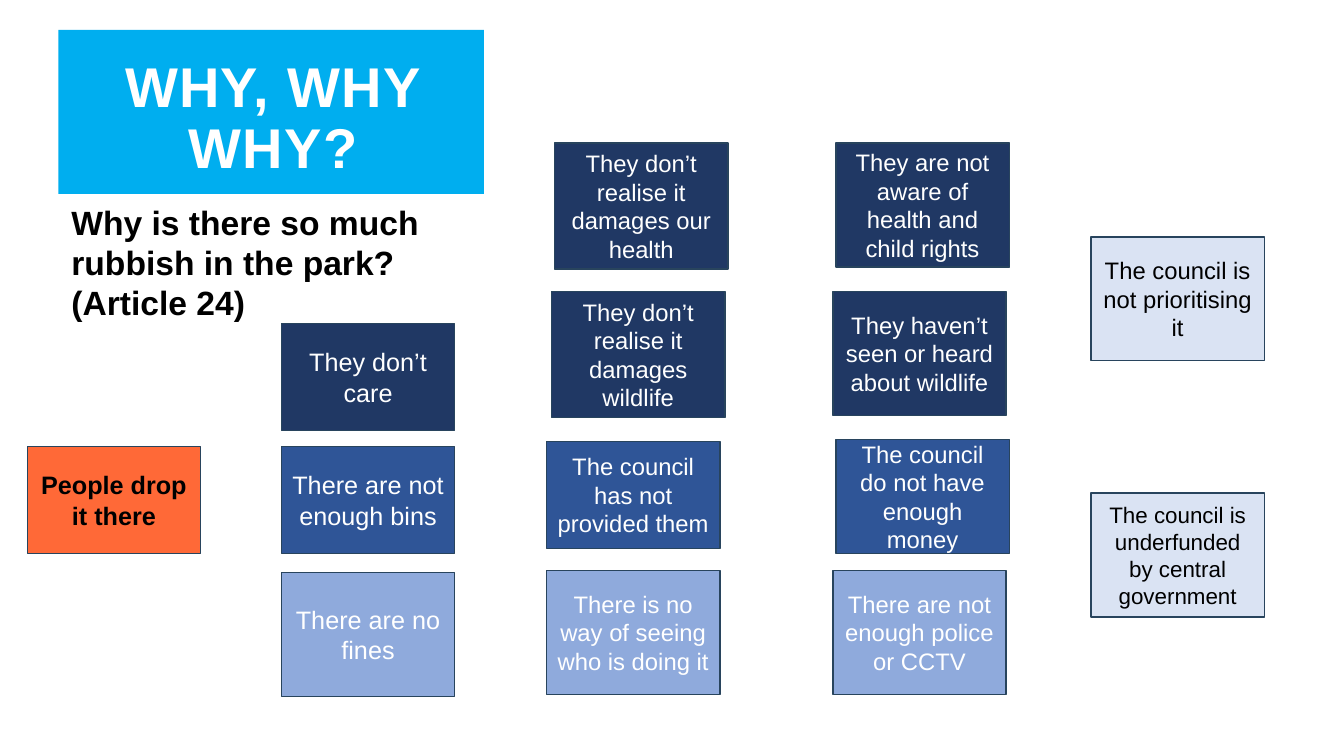
"""Build the "Why, why, why?" slide about rubbish in the park."""
from dataclasses import dataclass
from typing import Any

from pptx import Presentation
from pptx.dml.color import RGBColor
from pptx.enum.shapes import MSO_SHAPE as Preset
from pptx.enum.text import MSO_ANCHOR as Anchor, MSO_AUTO_SIZE as AutoSize, PP_ALIGN as Align
from pptx.util import Inches, Pt

COLOURS = {
    "heading": "00AEEF",
    "problem": "FF6937",
    "attitudes": "203864",
    "bins": "2F5597",
    "policing": "8FAADC",
    "council": "DAE3F3",
    "outline": "28445D",
    "light": "FFFFFF",
    "dark": "000000",
}
CARD_WIDTH = 1.72
HEADING_FRAME = {
    "margin_left": Inches(0.16),
    "margin_top": Inches(0.16),
    "margin_right": Inches(0.12),
    "margin_bottom": 0,
    "vertical_anchor": Anchor.MIDDLE,
    "auto_size": AutoSize.SHAPE_TO_FIT_TEXT,
    "word_wrap": True,
}
HEADING_PARAGRAPH = {"alignment": Align.CENTER, "line_spacing": 0.9, "space_before": 0}
QUESTION_FRAME = {"word_wrap": True, "auto_size": AutoSize.SHAPE_TO_FIT_TEXT}
CARD_FRAME = {"word_wrap": True, "vertical_anchor": Anchor.MIDDLE}


@dataclass(frozen=True)
class Card:
    """One reason in the chain of whys."""

    text: str
    left: float
    top: float
    height: float
    fill: str
    size: int = 17
    ink: str = "light"
    bold: bool = False


CARDS = (
    Card("People drop it there", 0.27, 4.43, 1.06, "problem", 18, "dark", True),
    Card("They don’t care", 2.79, 3.21, 1.06, "attitudes", 18),
    Card("There are not enough bins", 2.79, 4.43, 1.06, "bins", 18),
    Card("There are no fines", 2.79, 5.68, 1.23, "policing", 18),
    Card("They don’t realise it damages our health", 5.5, 1.42, 1.25, "attitudes"),
    Card("They don’t realise it damages wildlife", 5.47, 2.89, 1.25, "attitudes"),
    Card("The council has not provided them", 5.42, 4.38, 1.06, "bins"),
    Card("There is no way of seeing who is doing it", 5.42, 5.66, 1.23, "policing"),
    Card("They are not aware of health and child rights", 8.29, 1.42, 1.23, "attitudes"),
    Card("They haven’t seen or heard about wildlife", 8.26, 2.89, 1.23, "attitudes"),
    Card("The council do not have enough money", 8.29, 4.36, 1.13, "bins"),
    Card("There are not enough police or CCTV", 8.26, 5.66, 1.23, "policing"),
    Card("The council is not prioritising it", 10.82, 2.35, 1.23, "council", 17, "dark"),
    Card("The council is underfunded by central government", 10.82, 4.89, 1.23, "council", 16, "dark"),
)


def colour(name: str) -> RGBColor:
    """Look up a named colour."""
    return RGBColor.from_string(COLOURS[name])


def apply(target: Any, values: dict[str, Any]) -> None:
    """Set each attribute named in values."""
    for name, value in values.items():
        setattr(target, name, value)


def paint(shape: Any, fill: str) -> None:
    """Give a shape a solid fill."""
    shape.fill.solid()
    shape.fill.fore_color.rgb = colour(fill)


def write(shape: Any, text: str, frame: dict[str, Any], layout: dict[str, Any],
          size: int, ink: str, bold: bool) -> None:
    """Fill a shape with text, one paragraph to a line."""
    shape.text_frame.text = text
    apply(shape.text_frame, frame)
    for paragraph in shape.text_frame.paragraphs:
        apply(paragraph, layout)
        for run in paragraph.runs:
            apply(run.font, {"name": "Arial", "size": Pt(size), "bold": bold})
            run.font.color.rgb = colour(ink)


def add_heading(slide: Any) -> None:
    """Format the title placeholder as the blue heading."""
    heading = slide.shapes.title
    apply(heading, {"left": Inches(0.58), "top": Inches(0.43),
                    "width": Inches(4.22), "height": Inches(1.36)})
    paint(heading, "heading")
    write(heading, "WHY, WHY WHY?", HEADING_FRAME, HEADING_PARAGRAPH, 40, "light", True)
    run = heading.text_frame.paragraphs[0].runs[0]
    run.font._element.set("spc", "100")


def add_question(slide: Any) -> None:
    """Add the question under the heading."""
    question = slide.shapes.add_textbox(Inches(0.61), Inches(1.95), Inches(4.19), Inches(1.31))
    write(question, "Why is there so much\nrubbish in the park? (Article 24)",
          QUESTION_FRAME, {}, 24, "dark", True)


def add_card(slide: Any, card: Card) -> None:
    """Draw one reason card."""
    shape = slide.shapes.add_shape(Preset.RECTANGLE, Inches(card.left), Inches(card.top),
                                   Inches(CARD_WIDTH), Inches(card.height))
    shape.shadow.inherit = False
    paint(shape, card.fill)
    shape.line.color.rgb = colour("outline")
    shape.line.width = Pt(1)
    write(shape, card.text, CARD_FRAME, {"alignment": Align.CENTER},
          card.size, card.ink, card.bold)


def main() -> None:
    """Build and save the presentation."""
    presentation = Presentation()
    apply(presentation, {"slide_width": Inches(13.33), "slide_height": Inches(7.5)})
    slide = presentation.slides.add_slide(presentation.slide_layouts[5])
    add_heading(slide)
    add_question(slide)
    for card in CARDS:
        add_card(slide, card)
    presentation.save("out.pptx")


if __name__ == "__main__":
    main()
